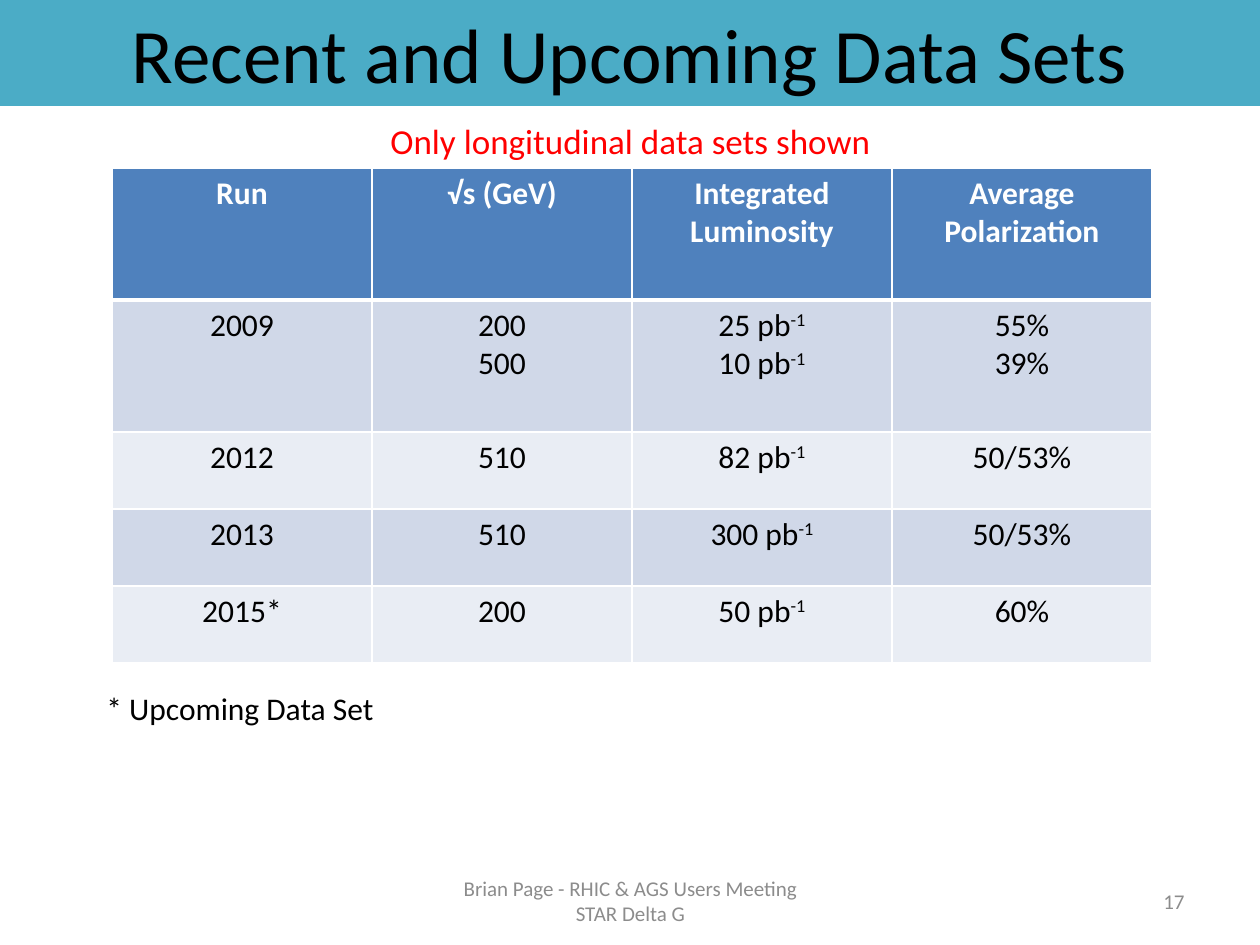
from lxml import etree
from pptx import Presentation
from pptx.dml.color import RGBColor
from pptx.enum.text import MSO_ANCHOR, MSO_AUTO_SIZE, PP_ALIGN
from pptx.oxml.ns import qn
from pptx.util import Emu, Pt

LEFT, CENTER, RIGHT = PP_ALIGN.LEFT, PP_ALIGN.CENTER, PP_ALIGN.RIGHT
TOP, MIDDLE = MSO_ANCHOR.TOP, MSO_ANCHOR.MIDDLE

# Content: "^" starts a superscript, a newline starts a paragraph
TITLE = "Recent and Upcoming Data Sets"
HEADER = ["Run", "√s (GeV)", "Integrated Luminosity", "Average Polarization"]
RUNS = [
    ["2009", "200\n500", "25 pb^-1\n10 pb^-1", "55%\n39%"],
    ["2012", "510", "82 pb^-1", "50/53%"],
    ["2013", "510", "300 pb^-1", "50/53%"],
    ["2015*", "200", "50 pb^-1", "60%"],
]

THEME = {
    "font": "Calibri",
    "title": 44, "subtitle": 20, "body": 18, "footer": 12,
    "black": "000000", "white": "FFFFFF", "red": "FF0000", "gray": "8C8C8C",
    "banner": "4BACC6", "header": "4F81BD", "bands": ["D0D8E8", "E9EDF4"],
}

# Text boxes: text, (left, top, width, height) in px, format
LABELS = [
    ("Brian Page - RHIC & AGS Users Meeting STAR Delta G", (431, 876, 399, 50),
     dict(size="footer", color="gray", align=CENTER, anchor=MIDDLE)),
    ("17", (903, 876, 294, 50),
     dict(size="footer", color="gray", align=RIGHT, anchor=MIDDLE)),
    ("* Upcoming Data Set", (94, 683, 689, 50), dict(align=LEFT)),
    ("Only longitudinal data sets shown", (116, 113, 1029, 55),
     dict(size="subtitle", color="red")),
]

# Geometry in px
PX_PER_INCH = 126
SLIDE_SIZE = (1260, 945)
BANNER_BOX = (0, 0, 1260, 106)
TABLE_LEFT, TABLE_TOP, COLUMN_WIDTH = 112, 168, 260
ROW_HEIGHTS = [132, 132, 77, 77, 77]


def px(value):
    return Emu(round(value * 914400 / PX_PER_INCH))


def rgb(name):
    return RGBColor.from_string(THEME.get(name, name))


def write_text(frame, text, size="body", color="black", bold=False,
               align=CENTER, anchor=TOP):
    frame.word_wrap = True
    frame.vertical_anchor = anchor
    for index, line in enumerate(text.split("\n")):
        paragraph = frame.paragraphs[0] if index == 0 else frame.add_paragraph()
        paragraph.alignment = align
        for part, content in enumerate(line.split("^")):
            run = paragraph.add_run()
            run.text = content
            run.font.name = THEME["font"]
            run.font.size = Pt(THEME[size])
            run.font.bold = bold
            run.font.color.rgb = rgb(color)
            if part:
                run.font._element.set("baseline", "30000")


def set_borders(cell, widths):
    properties = cell._tc.get_or_add_tcPr()
    for side, width in zip("LRTB", widths):
        line = etree.SubElement(properties, qn(f"a:ln{side}"), w=str(Pt(width)))
        fill = etree.SubElement(line, qn("a:solidFill"))
        etree.SubElement(fill, qn("a:srgbClr"), val=THEME["white"])


def add_title(slide):
    title = slide.shapes.title
    title.left, title.top, title.width, title.height = map(px, BANNER_BOX)
    title.fill.solid()
    title.fill.fore_color.rgb = rgb("banner")
    write_text(title.text_frame, TITLE, size="title")
    title.text_frame.auto_size = MSO_AUTO_SIZE.NONE


def add_data_table(slide):
    rows = [HEADER] + RUNS
    table = slide.shapes.add_table(
        len(rows), len(HEADER), px(TABLE_LEFT), px(TABLE_TOP),
        px(COLUMN_WIDTH * len(HEADER)), px(sum(ROW_HEIGHTS))).table
    for column in table.columns:
        column.width = px(COLUMN_WIDTH)
    for row_index, row in enumerate(rows):
        is_header = row_index == 0
        table.rows[row_index].height = px(ROW_HEIGHTS[row_index])
        background = "header" if is_header else THEME["bands"][(row_index - 1) % 2]
        for column_index, text in enumerate(row):
            cell = table.cell(row_index, column_index)
            set_borders(cell, (1, 1, 3 if row_index == 1 else 1, 3 if is_header else 1))
            cell.fill.solid()
            cell.fill.fore_color.rgb = rgb(background)
            write_text(cell.text_frame, text, bold=is_header,
                       color="white" if is_header else "black")


def main():
    presentation = Presentation()
    presentation.slide_width, presentation.slide_height = map(px, SLIDE_SIZE)
    slide = presentation.slides.add_slide(
        presentation.slide_layouts.get_by_name("Title Only"))
    add_title(slide)
    add_data_table(slide)
    for text, box, style in LABELS:
        label = slide.shapes.add_textbox(*map(px, box))
        write_text(label.text_frame, text, **style)
    presentation.save("out.pptx")


if __name__ == "__main__":
    main()
